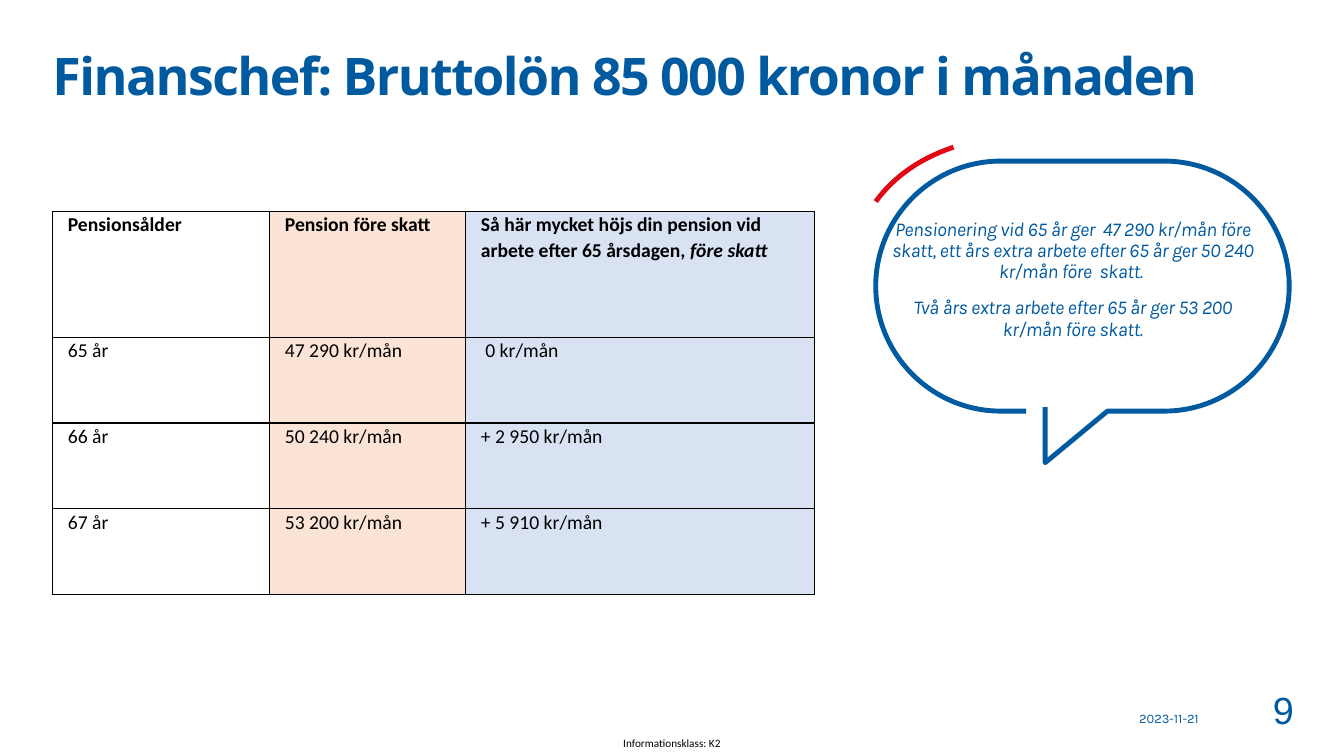
from lxml import etree
from pptx import Presentation
from pptx.dml.color import RGBColor
from pptx.enum.text import MSO_ANCHOR, MSO_AUTO_SIZE, PP_ALIGN
from pptx.oxml.ns import qn
from pptx.util import Cm, Pt

LEFT, MID, RIGHT = PP_ALIGN.LEFT, PP_ALIGN.CENTER, PP_ALIGN.RIGHT
TOP, CENTRE, BOTTOM = MSO_ANCHOR.TOP, MSO_ANCHOR.MIDDLE, MSO_ANCHOR.BOTTOM
FIXED = MSO_AUTO_SIZE.NONE

HUES = {
    "blue": "005AA0",
    "red": "E30613",
    "black": "000000",
    "white": "FFFFFF",
    "peach": "FBE4D5",
    "pale": "D9E2F3",
}

HEADS = [
    "Pensionsålder",
    "Pension före skatt",
    "Så här mycket höjs din pension vid arbete efter 65 årsdagen, ",
]
ROWS = [
    ["65 år", "47 290 kr/mån", " 0 kr/mån"],
    ["66 år", "50 240 kr/mån", "+ 2 950 kr/mån"],
    ["67 år", "53 200 kr/mån", "+ 5 910 kr/mån"],
]
ADVICE = [
    "Pensionering vid 65 år ger  47 290 kr/mån före skatt, "
    "ett års extra arbete efter 65 år ger 50 240 kr/mån före  skatt. ",
    "Två års extra arbete efter 65 år ger 53 200 kr/mån före skatt.",
]

TITLE = {"name": "Noto Sans", "size": Pt(37), "bold": True}
QUOTE = {"name": "Karla", "size": Pt(14), "italic": True}
DATE = {"name": "Karla", "size": Pt(9.3)}
PAGE = {"name": "Arial", "size": Pt(27)}
CLASS = {"name": "Calibri", "size": Pt(8)}
CELL = {"name": "Calibri", "size": Pt(14), "bold": False}
HEAD = {**CELL, "bold": True}


def hue(name):
    return RGBColor.from_string(HUES[name])


def assign(item, values):
    for key, value in values.items():
        setattr(item, key, value)


def add_run(para, text, font, tone="blue", track=0):
    run = para.add_run()
    run.text = text
    assign(run.font, font)
    run.font.color.rgb = hue(tone)
    if track:
        run._r.get_or_add_rPr().set("spc", str(track))


def set_box(shape, box, anchor, insets=(0, 0, 0, 0), wrap=True):
    assign(shape, dict(zip(("left", "top", "width", "height"), map(Cm, box))))
    frame = shape.text_frame
    sides = ("margin_left", "margin_top", "margin_right", "margin_bottom")
    assign(frame, dict(zip(sides, map(Cm, insets))))
    assign(frame, {"auto_size": FIXED, "word_wrap": wrap, "vertical_anchor": anchor})
    return frame


def add_label(slide, box, text, font, anchor, align, tone="blue", wrap=True):
    shape = slide.shapes.add_textbox(0, 0, 0, 0)
    para = set_box(shape, box, anchor, wrap=wrap).paragraphs[0]
    para.alignment = align
    add_run(para, text, font, tone)


def add_stroke(slide, start, steps, tone):
    pen = slide.shapes.build_freeform(*map(Cm, start))
    pen.add_line_segments(
        [tuple(map(Cm, point)) for step in steps for point in step], close=False)
    shape = pen.convert_to_shape()
    nodes = iter(list(shape._element.iter(qn("a:lnTo"))))
    for step in steps:
        group = [next(nodes) for _ in step]
        if len(group) == 3:
            curve = etree.Element(qn("a:cubicBezTo"))
            group[0].addprevious(curve)
            for node in group:
                curve.append(node[0])
                node.getparent().remove(node)
    shape.shadow.inherit = False
    shape.fill.background()
    shape.line.color.rgb = hue(tone)
    shape.line.width = Pt(3.5)


def half_round(x, y, radius, side):
    bend = 0.55 * radius
    tip = x + side * radius
    return [
        [(x + side * bend, y + side * radius), (tip, y + side * bend), (tip, y)],
        [(tip, y - side * bend), (x + side * bend, y - side * radius),
         (x, y - side * radius)],
    ]


def add_bubble(slide):
    tail = [[(26.34, 11.66)], [(27.91, 10.36)], [(29.34, 10.36)]]
    right = half_round(29.34, 7.21, 3.15, 1)
    left = half_round(25.22, 7.21, 3.15, -1)
    steps = tail + right + [[(25.22, 4.06)]] + left + [[(25.86, 10.36)]]
    add_stroke(slide, (26.34, 10.26), steps, "blue")
    add_stroke(slide, (24.03, 3.71),
               [[(23.19, 3.99), (22.53, 4.45), (22.07, 5.08)]], "red")


def fill_title(slide, text):
    frame = set_box(slide.shapes.title, (1.32, 1.33, 31.22, 2.13), TOP)
    para = frame.paragraphs[0]
    assign(para, {"alignment": LEFT, "line_spacing": 0.85})
    add_run(para, text, TITLE, track=-107)


def fill_quote(slide):
    frame = set_box(slide.placeholders[1], (21.74, 4.17, 10.59, 6.3), CENTRE,
                    (0.6, 0.89, 0.6, 1.42))
    for index, text in enumerate(ADVICE):
        para = frame.add_paragraph() if index else frame.paragraphs[0]
        props = para._p.get_or_add_pPr()
        props.set("marL", "0")
        props.set("indent", "0")
        etree.SubElement(props, qn("a:buNone"))
        assign(para, {"alignment": MID, "line_spacing": 0.9,
                      "space_before": Pt(10.7 if index else 0)})
        add_run(para, text, QUOTE, track=-27)


def add_border(cell):
    props = cell._tc.get_or_add_tcPr()
    for side in ("lnL", "lnR", "lnT", "lnB"):
        line = etree.SubElement(props, qn("a:" + side), w=str(Pt(1)))
        paint = etree.SubElement(line, qn("a:solidFill"))
        etree.SubElement(paint, qn("a:srgbClr"), val=HUES["black"])


def add_grid(slide):
    widths, heights = (5.47, 4.94, 8.8), (3.17, 2.16, 2.16, 2.16)
    table = slide.shapes.add_table(
        len(heights), len(widths), Cm(1.32), Cm(5.33),
        Cm(sum(widths)), Cm(sum(heights))).table
    table.horz_banding = False
    for column, width in zip(table.columns, widths):
        column.width = Cm(width)
    for row, height, texts in zip(table.rows, heights, [HEADS] + ROWS):
        row.height = Cm(height)
        font = HEAD if texts is HEADS else CELL
        for cell, text, tone in zip(row.cells, texts, ("white", "peach", "pale")):
            add_border(cell)
            cell.fill.solid()
            cell.fill.fore_color.rgb = hue(tone)
            assign(cell, {"margin_left": Cm(0.39), "margin_right": Cm(0.39),
                          "margin_top": 0, "margin_bottom": 0})
            para = cell.text_frame.paragraphs[0]
            assign(para, {"line_spacing": 1.07, "space_after": Pt(8)})
            add_run(para, text, font, "black")
    last = table.cell(0, 2).text_frame.paragraphs[0]
    add_run(last, "före skatt", {**HEAD, "italic": True}, "black")


def main():
    deck = Presentation()
    assign(deck, {"slide_width": Cm(33.87), "slide_height": Cm(19.05)})
    slide = deck.slides.add_slide(deck.slide_layouts[1])
    fill_title(slide, "Finanschef: Bruttolön 85 000 kronor i månaden")
    add_bubble(slide)
    fill_quote(slide)
    add_grid(slide)
    add_label(slide, (28.71, 17.48, 1.73, 0.81), "2023-11-21", DATE, BOTTOM, LEFT)
    add_label(slide, (30.45, 17.38, 2.16, 1.07), "9", PAGE, BOTTOM, RIGHT, wrap=False)
    add_label(slide, (15.36, 18.4, 3.15, 0.64), "Informationsklass: K2",
              CLASS, CENTRE, MID, "black")
    deck.save("out.pptx")


if __name__ == "__main__":
    main()
